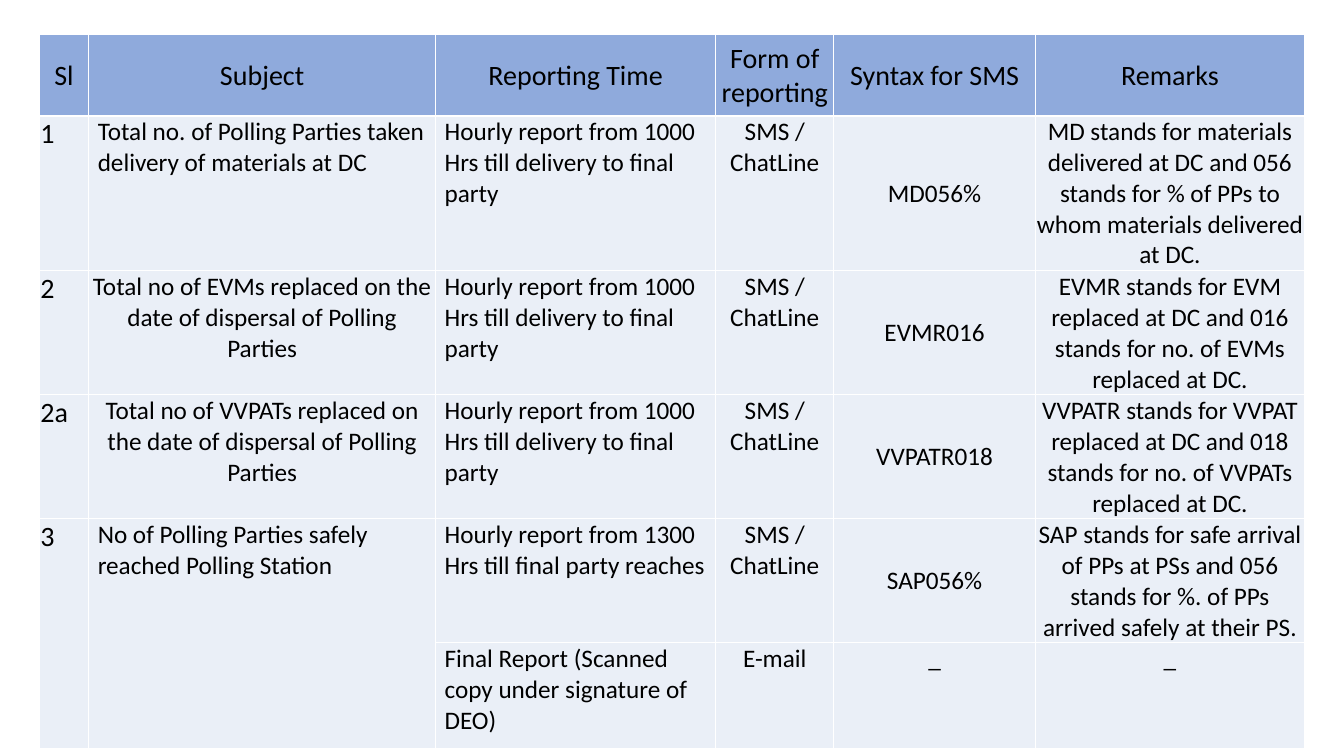
from pptx import Presentation
from pptx.dml.color import RGBColor
from pptx.enum.text import MSO_ANCHOR, PP_ALIGN
from pptx.oxml.ns import qn
from pptx.util import Inches, Pt
from lxml.etree import SubElement

BLACK = RGBColor(0x00, 0x00, 0x00)
WHITE = RGBColor(0xFF, 0xFF, 0xFF)
BLUE = RGBColor(0x8F, 0xAA, 0xDC)
PALE = RGBColor(0xEA, 0xEF, 0xF7)

FONT = "Calibri"
WIDTHS = [0.49, 3.44, 2.78, 1.17, 2, 2.67]
HEIGHTS = [0.81, 1.41, 1.16, 1.18, 1.18, 1.05]
HOURLY = "Hourly report from 1000 Hrs till delivery to final party"
SMS = "SMS / ChatLine"

HEADS = ["Sl", "Subject", "Reporting Time", "Form of reporting",
         "Syntax for SMS", "Remarks"]
REPORTS = [
    ["1", "Total no. of Polling Parties taken delivery of materials at DC",
     HOURLY, SMS, "MD056%",
     "MD stands for materials delivered at DC and 056 stands for % of PPs "
     "to whom materials delivered at DC."],
    ["2", "Total no of EVMs replaced on the date of dispersal of Polling Parties",
     HOURLY, SMS, "EVMR016",
     "EVMR stands for EVM replaced at DC and 016 stands for no. of EVMs "
     "replaced at DC."],
    ["2a", "Total no of VVPATs replaced on the date of dispersal of Polling Parties",
     HOURLY, SMS, "VVPATR018",
     "VVPATR stands for VVPAT replaced at DC and 018 stands for no. of VVPATs "
     "replaced at DC."],
    ["3", "No of Polling Parties safely reached Polling Station",
     "Hourly report from 1300 Hrs till final party reaches", SMS, "SAP056%",
     "SAP stands for safe arrival of PPs at PSs and 056 stands for %. of PPs "
     "arrived safely at their PS."],
    ["", "", "Final Report (Scanned copy under signature of DEO)", "E-mail",
     "_", "_"],
]


def add_edges(cell):
    props = cell._tc.get_or_add_tcPr()
    for side in ("a:lnL", "a:lnR", "a:lnT", "a:lnB"):
        line = SubElement(props, qn(side), w=str(Pt(1)))
        fill = SubElement(line, qn("a:solidFill"))
        SubElement(fill, qn("a:srgbClr"), val=str(WHITE))


def style_cell(cell, color):
    add_edges(cell)
    cell.fill.solid()
    cell.fill.fore_color.rgb = color


def write_cell(cell, text, size, align, anchor, left, right):
    cell.margin_left = Inches(left)
    cell.margin_right = Inches(right)
    cell.margin_top = Inches(0.01)
    cell.margin_bottom = Inches(0)
    cell.vertical_anchor = anchor
    para = cell.text_frame.paragraphs[0]
    para.alignment = align
    run = para.add_run()
    run.text = text
    run.font.name = FONT
    run.font.size = Pt(size)
    run.font.bold = False
    run.font.color.rgb = BLACK


def fill_head(table):
    for col, text in enumerate(HEADS):
        cell = table.cell(0, col)
        style_cell(cell, BLUE)
        write_cell(cell, text, 20, PP_ALIGN.CENTER, MSO_ANCHOR.MIDDLE, 0.01, 0.01)


def fill_body(table):
    last = len(REPORTS)
    for row, report in enumerate(REPORTS, 1):
        for col, text in enumerate(report):
            cell = table.cell(row, col)
            style_cell(cell, PALE)
            if not text:
                continue
            indent = col == 2 or (col == 1 and row in (1, 4))
            flush = col == 0 or indent
            middle = col > 3 and row < last
            write_cell(cell, text, 20 if col == 0 else 18,
                       PP_ALIGN.LEFT if flush else PP_ALIGN.CENTER,
                       MSO_ANCHOR.MIDDLE if middle else MSO_ANCHOR.TOP,
                       0.09 if indent else 0.01,
                       0.09 if col == 0 else 0.01)
    for col in (0, 1):
        table.cell(last - 1, col).merge(table.cell(last, col))


def add_grid(slide):
    frame = slide.shapes.add_table(
        len(HEIGHTS), len(WIDTHS), Inches(0.39), Inches(0.34),
        Inches(sum(WIDTHS)), Inches(sum(HEIGHTS)))
    table = frame.table
    table.first_row = False
    table.horz_banding = False
    for col, width in zip(table.columns, WIDTHS):
        col.width = Inches(width)
    for row, height in zip(table.rows, HEIGHTS):
        row.height = Inches(height)
    return table


def main():
    deck = Presentation()
    deck.slide_width = Inches(13.33)
    deck.slide_height = Inches(7.5)
    slide = deck.slides.add_slide(deck.slide_layouts[6])
    table = add_grid(slide)
    fill_head(table)
    fill_body(table)
    deck.save("out.pptx")


if __name__ == "__main__":
    main()
